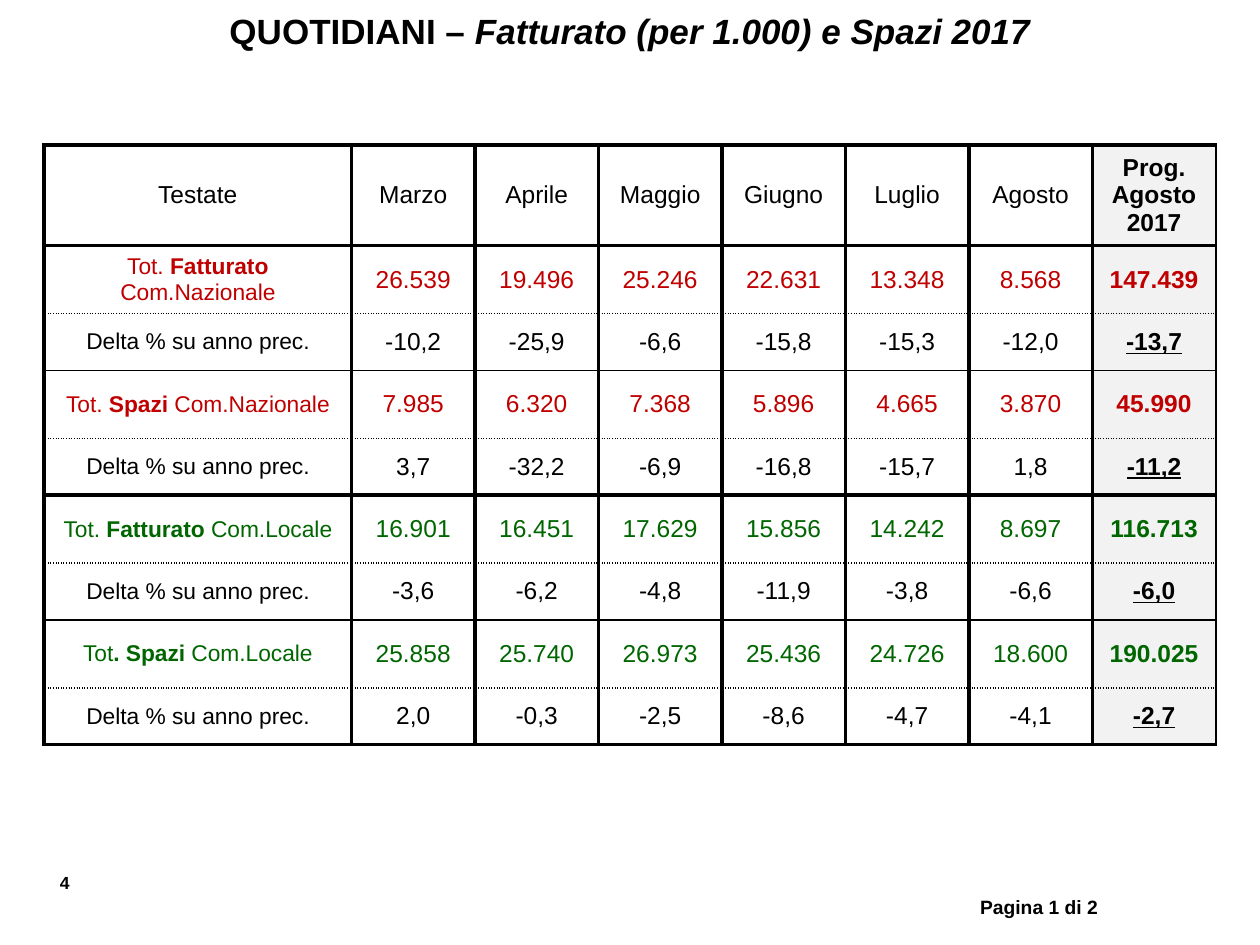
import pptx
import pptx.dml.color
import pptx.enum.text
import pptx.oxml
import pptx.oxml.ns
import pptx.util
from pptx.util import Inches

# Content
TITLE = [("QUOTIDIANI – ", {}), ("Fatturato (per 1.000) e Spazi 2017", {"italic": True})]
MONTHS = ["Marzo", "Aprile", "Maggio", "Giugno", "Luglio", "Agosto"]
HEADER = ["Testate", *MONTHS, "Prog.\vAgosto 2017"]
DELTA_LABEL = "Delta % su anno prec."
# Label parts (plain, bold, plain), colour name, totals, changes on the previous year
GROUPS = [
    (("Tot. ", "Fatturato ", "Com.Nazionale"), "national",
     ["26.539", "19.496", "25.246", "22.631", "13.348", "8.568", "147.439"],
     ["-10,2", "-25,9", "-6,6", "-15,8", "-15,3", "-12,0", "-13,7"]),
    (("Tot. ", "Spazi ", "Com.Nazionale"), "national",
     ["7.985", "6.320", "7.368", "5.896", "4.665", "3.870", "45.990"],
     ["3,7", "-32,2", "-6,9", "-16,8", "-15,7", "1,8", "-11,2"]),
    (("Tot. ", "Fatturato ", "Com.Locale"), "local",
     ["16.901", "16.451", "17.629", "15.856", "14.242", "8.697", "116.713"],
     ["-3,6", "-6,2", "-4,8", "-11,9", "-3,8", "-6,6", "-6,0"]),
    (("Tot", ". Spazi ", "Com.Locale"), "local",
     ["25.858", "25.740", "26.973", "25.436", "24.726", "18.600", "190.025"],
     ["2,0", "-0,3", "-2,5", "-8,6", "-4,7", "-4,1", "-2,7"]),
]
PAGE_NUMBER = "4"
PAGE_COUNT = "Pagina 1 di 2"

THEME = {
    "font": "Arial",
    "sizes": {"title": 20, "value": 14, "label": 13, "count": 11, "number": 10},
    "colours": {"text": "000000", "national": "C00000", "local": "006600",
                "cell": "FFFFFF", "total": "F2F2F2"},
}
THICK, THIN, DOTTED = (2.25, "solid"), (1, "solid"), (1, "sysDot")
ALIGN = pptx.enum.text.PP_ALIGN
MIDDLE = pptx.enum.text.MSO_ANCHOR.MIDDLE


def colour(name):
    return pptx.dml.color.RGBColor.from_string(THEME["colours"][name])


def write(text_frame, parts, size, colour_name="text", align=ALIGN.CENTER):
    """Fill the first paragraph with (text, font values) parts."""
    paragraph = text_frame.paragraphs[0]
    paragraph.alignment = align
    for text, values in parts:
        for index, line in enumerate(text.split("\v")):
            if index:
                paragraph.add_line_break()
            run = paragraph.add_run()
            run.text = line
            base = {"name": THEME["font"], "size": pptx.util.Pt(THEME["sizes"][size])}
            for name, value in {**base, **values}.items():
                setattr(run.font, name, value)
            run.font.color.rgb = colour(colour_name)


def set_borders(cell, lines):
    properties = cell._tc.get_or_add_tcPr()
    for index, (side, (width, dash)) in enumerate(lines.items()):
        line = pptx.oxml.parse_xml(
            f'<a:ln{side} {pptx.oxml.ns.nsdecls("a")} w="{pptx.util.Pt(width)}">'
            f'<a:solidFill><a:srgbClr val="{THEME["colours"]["text"]}"/></a:solidFill>'
            f'<a:prstDash val="{dash}"/></a:ln{side}>')
        properties.insert(index, line)


def table_rows():
    """Yield label parts, values, colour name and bottom border of each row."""
    yield [(HEADER[0], {})], HEADER[1:], "text", THICK
    for index, (label, colour_name, totals, deltas) in enumerate(GROUPS):
        parts = [(text, {"bold": place == 1}) for place, text in enumerate(label)]
        yield parts, totals, colour_name, DOTTED
        yield [(DELTA_LABEL, {})], deltas, "text", THICK if index % 2 else THIN


def add_table(slide):
    column_widths = [2.44] + [0.98] * len(HEADER[1:])
    row_heights = [0.8] + [0.54, 0.45] * len(GROUPS)
    frame = slide.shapes.add_table(
        len(row_heights), len(column_widths), Inches(0.35), Inches(1.15),
        Inches(sum(column_widths)), Inches(sum(row_heights)))
    table = frame.table
    table.first_row = table.horz_banding = False
    for column, width in zip(table.columns, column_widths):
        column.width = Inches(width)
    for row, height in zip(table.rows, row_heights):
        row.height = Inches(height)

    last = len(column_widths) - 1
    top = THICK
    for row, (label, values, colour_name, bottom) in enumerate(table_rows()):
        is_header, is_delta = row == 0, row > 0 and row % 2 == 0
        for column in range(last + 1):
            cell = table.cell(row, column)
            is_total = column == last
            cell.vertical_anchor = MIDDLE
            padded = is_header or column == 0
            cell.margin_left = cell.margin_right = Inches(0.1 if padded else 0)
            cell.margin_top = cell.margin_bottom = Inches(0.05 if padded else 0)
            cell.fill.solid()
            cell.fill.fore_color.rgb = colour("total" if is_total else "cell")
            set_borders(cell, {"L": THICK, "R": THIN if is_total else THICK,
                               "T": top, "B": bottom})
            if column == 0:
                parts, size = label, "value" if is_header else "label"
            else:
                style = {"bold": is_total, "underline": is_total and is_delta}
                parts, size = [(values[column - 1], style)], "value"
            write(cell.text_frame, parts, size, colour_name)
        top = bottom


def add_label(slide, text, box, size, align):
    shape = slide.shapes.add_textbox(*map(Inches, box))
    shape.text_frame.word_wrap = True
    write(shape.text_frame, [(text, {"bold": True})], size, align=align)


def main():
    presentation = pptx.Presentation()
    presentation.slide_width, presentation.slide_height = Inches(10), Inches(7.5)
    slide = presentation.slides.add_slide(presentation.slide_layouts[5])

    # Title
    title = slide.shapes.title
    box = {"left": 0, "top": 0.02, "width": 10, "height": 0.44}
    for name, value in box.items():
        setattr(title, name, Inches(value))
    title.text_frame.vertical_anchor = MIDDLE
    title.text_frame.auto_size = pptx.enum.text.MSO_AUTO_SIZE.NONE
    write(title.text_frame, [(text, {"bold": True, **style}) for text, style in TITLE], "title")

    # Table and page labels
    add_table(slide)
    add_label(slide, PAGE_NUMBER, (0.19, 6.87, 0.46, 0.27), "number", ALIGN.RIGHT)
    add_label(slide, PAGE_COUNT, (7.68, 7.06, 1.42, 0.29), "count", ALIGN.LEFT)
    presentation.save("out.pptx")


if __name__ == "__main__":
    main()
